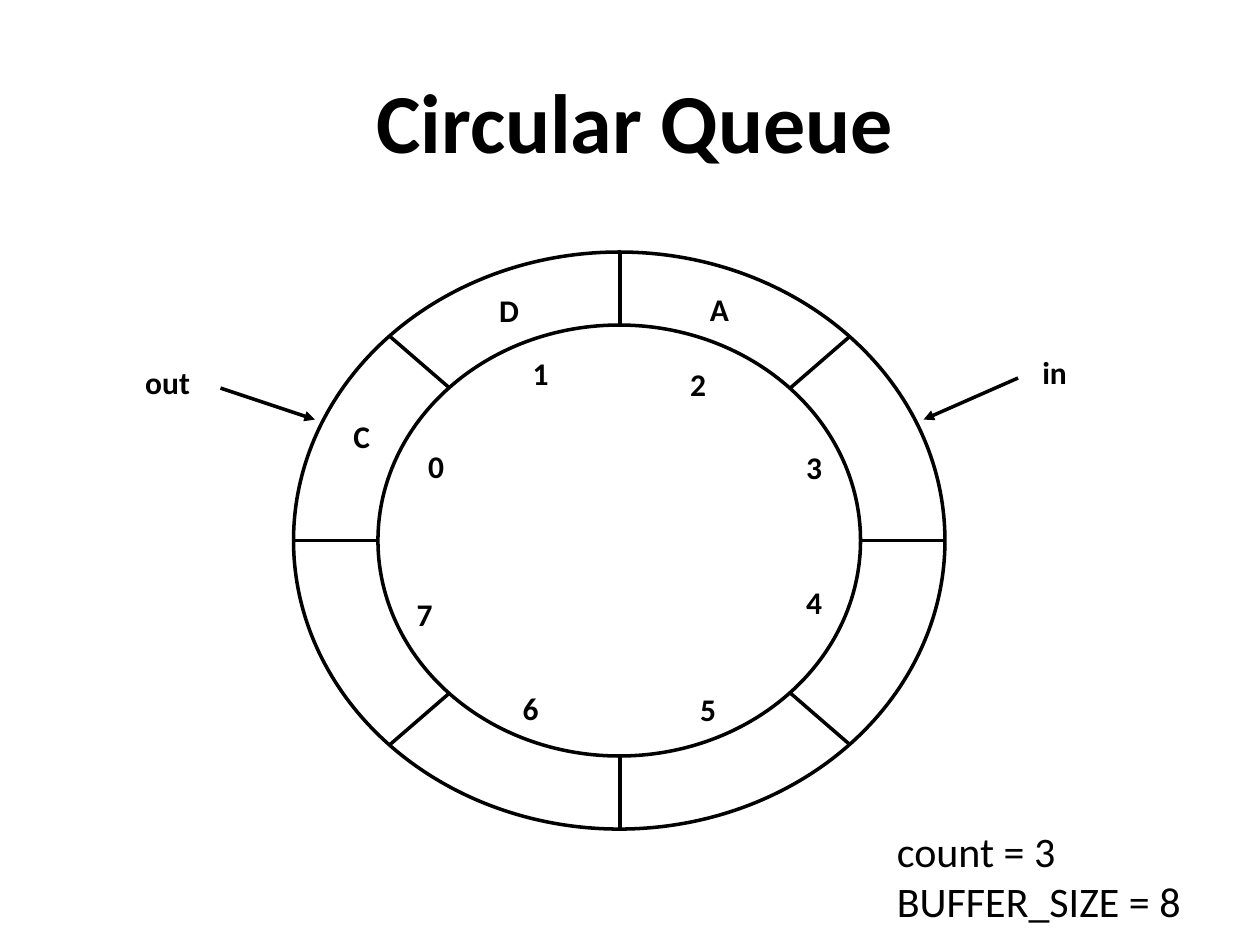
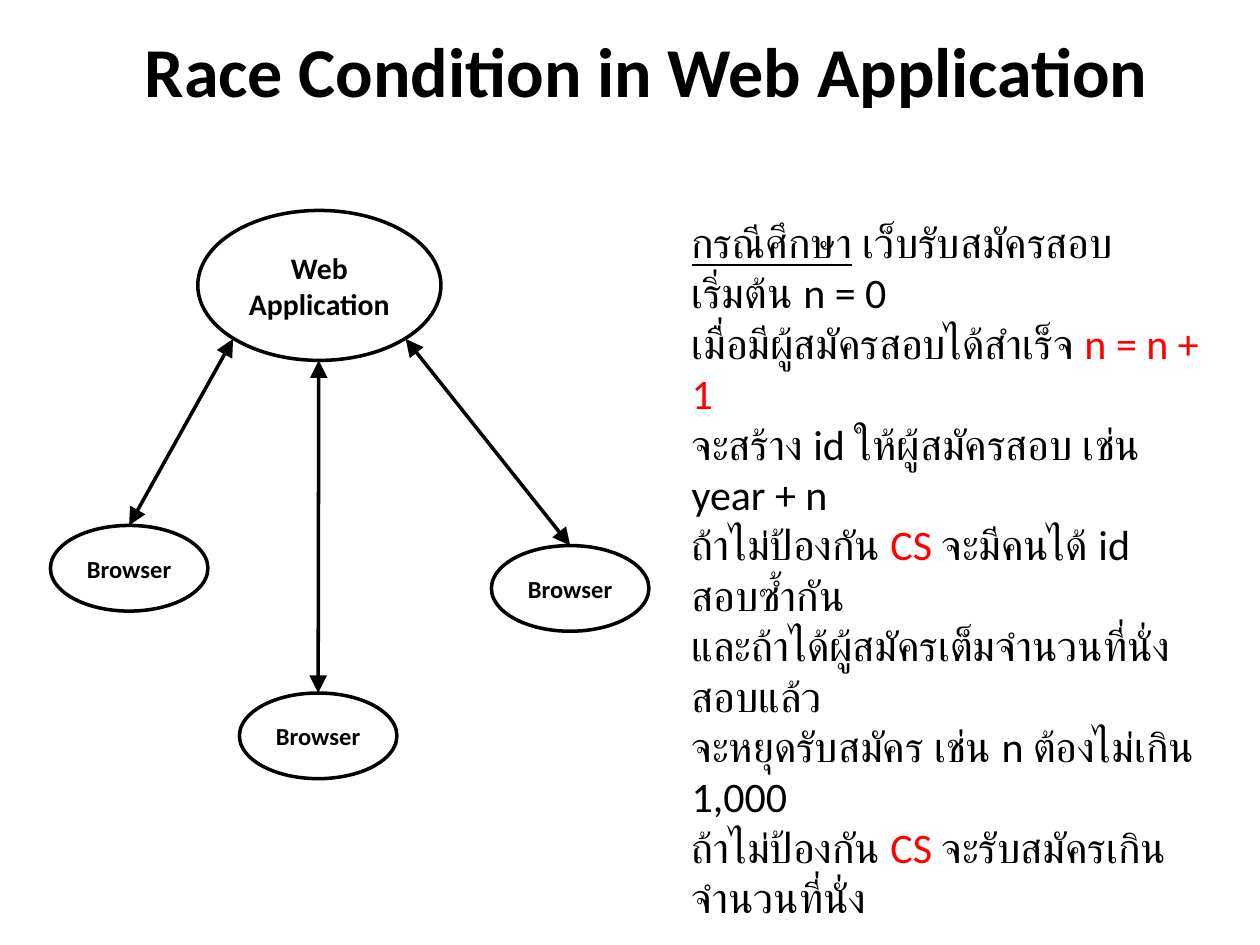
"""Build two slides: a circular queue and a race condition in a web application."""
import math

import lxml.etree
import pptx
import pptx.dml.color
import pptx.enum.shapes
import pptx.enum.text
import pptx.oxml.ns
import pptx.util

Inches = pptx.util.Inches
COLOURS = {"ink": "000000", "accent": "FF0000"}
FONT = "Calibri"
LINE_WIDTH = pptx.util.Pt(2)
CENTRE = pptx.enum.text.PP_ALIGN.CENTER
LEFT = pptx.enum.text.PP_ALIGN.LEFT
MIDDLE = pptx.enum.text.MSO_ANCHOR.MIDDLE


def write(text_frame, paragraphs, size, bold=False, alignment=CENTRE):
    text_frame.word_wrap = True
    for index, runs in enumerate(paragraphs):
        paragraph = text_frame.add_paragraph() if index else text_frame.paragraphs[0]
        paragraph.alignment = alignment
        for text, colour, underline in runs:
            for line_index, line in enumerate(text.split("\n")):
                if line_index:
                    paragraph.add_line_break()
                if line:
                    run = paragraph.add_run()
                    run.text = line
                    run.font.name = FONT
                    run.font.size = pptx.util.Pt(size)
                    run.font.bold = bold
                    run.font.underline = underline
                    run.font.color.rgb = pptx.dml.color.RGBColor.from_string(COLOURS[colour])


def connect(slide, start, end, arrow_ends=(), arrow_size="med"):
    connector = slide.shapes.add_connector(
        pptx.enum.shapes.MSO_CONNECTOR.STRAIGHT, *[Inches(value) for value in (*start, *end)])
    connector.line.color.rgb = pptx.dml.color.RGBColor.from_string(COLOURS["ink"])
    connector.line.width = LINE_WIDTH
    line = connector.line._get_or_add_ln()
    for arrow_end in arrow_ends:
        lxml.etree.SubElement(line, pptx.oxml.ns.qn(f"a:{arrow_end}"),
                              type="triangle", w=arrow_size, len=arrow_size)
    lxml.etree.SubElement(connector._element.spPr, pptx.oxml.ns.qn("a:effectLst"))
    return connector


presentation = pptx.Presentation()
presentation.slide_width = Inches(10)
presentation.slide_height = Inches(7.5)

slides = []
for title, size, left, top, height in [
    ("Circular Queue", 48, 0.58, 0.5, 0.91),
    ("Race Condition in Web Application", 40, 0.67, 0.17, 0.77),
]:
    slide = presentation.slides.add_slide(presentation.slide_layouts[5])
    shape = slide.shapes.title
    shape.left, shape.top = Inches(left), Inches(top)
    shape.width, shape.height = Inches(8.92), Inches(height)
    shape.text_frame.auto_size = pptx.enum.text.MSO_AUTO_SIZE.NONE
    shape.text_frame.vertical_anchor = MIDDLE
    write(shape.text_frame, [[(title, "ink", False)]], size, bold=True)
    slides.append(slide)
queue_slide, race_slide = slides

ellipses = []
for slide, left, top, width, height, text, size in [
    (queue_slide, 3, 2.58, 3.83, 3.42, "", 18),
    (queue_slide, 2.33, 2, 5.17, 4.58, "", 18),
    (race_slide, 1.57, 1.67, 1.93, 1.19, "Web Application", 17),
    (race_slide, 0.4, 4.17, 1.25, 0.68, "Browser", 14),
    (race_slide, 1.9, 5.5, 1.25, 0.68, "Browser", 14),
    (race_slide, 3.9, 4.33, 1.25, 0.68, "Browser", 14),
]:
    shape = slide.shapes.add_shape(
        pptx.enum.shapes.MSO_SHAPE.OVAL, Inches(left), Inches(top), Inches(width), Inches(height))
    shape.shadow.inherit = False
    shape.fill.background()
    shape.line.color.rgb = pptx.dml.color.RGBColor.from_string(COLOURS["ink"])
    shape.line.width = LINE_WIDTH
    if text:
        shape.text_frame.margin_left = shape.text_frame.margin_right = Inches(0.05)
        shape.text_frame.vertical_anchor = MIDDLE
        write(shape.text_frame, [[(text, "ink", False)]], size, bold=True)
    ellipses.append(shape)

ring_x, ring_y = 4.92, 4.29
for step in range(8):
    angle = step * math.pi / 4
    inner, outer = [
        (ring_x + radius_x * math.cos(angle), ring_y + radius_y * math.sin(angle))
        for radius_x, radius_y in [(1.91, 1.71), (2.58, 2.29)]
    ]
    connect(queue_slide, outer, inner)

for start, end in [((1.75, 3.08), (2.5, 3.33)), ((8.08, 3), (7.33, 3.33))]:
    connect(queue_slide, start, end, ["tailEnd"])

for label, left, top in [
    ("in", 8.08, 2.75), ("out", 1.04, 2.83),
    ("C", 2.58, 3.26), ("D", 3.75, 2.26), ("A", 5.42, 2.25),
    ("0", 3.17, 3.5), ("1", 4, 2.76), ("2", 5.25, 2.85), ("3", 6.17, 3.51),
    ("4", 6.17, 4.58), ("5", 5.33, 5.43), ("6", 3.92, 5.42), ("7", 3.08, 4.67),
]:
    shape = queue_slide.shapes.add_textbox(Inches(left), Inches(top), Inches(0.58), Inches(0.4))
    write(shape.text_frame, [[(label, "ink", False)]], 18, bold=True)

for start, end, browser in [
    ((1.85, 2.69), (1.03, 4.17), ellipses[3]),
    ((2.53, 2.86), (2.53, 5.5), ellipses[4]),
    ((3.22, 2.69), (4.53, 4.33), ellipses[5]),
]:
    connector = connect(race_slide, start, end, ["headEnd", "tailEnd"], "lg")
    connector.end_connect(browser, 0)

queue_state = [[("count = 3\nBUFFER_SIZE = 8", "ink", False)]]
case_study = [
    [
        ("กรณีศึกษา", "ink", True),
        (" เว็บรับสมัครสอบ\nเริ่มต้น n = 0\nเมื่อมีผู้สมัครสอบได้สำเร็จ ", "ink", False),
        ("n = n + 1\n", "accent", False),
        ("จะสร้าง id ให้ผู้สมัครสอบ เช่น year + n\nถ้าไม่ป้องกัน ", "ink", False),
        ("CS", "accent", False),
        (" จะมีคนได้ id สอบซ้ำกัน", "ink", False),
    ],
    [("และถ้าได้ผู้สมัครเต็มจำนวนที่นั่งสอบแล้ว", "ink", False)],
    [
        ("จะหยุดรับสมัคร เช่น n ต้องไม่เกิน 1,000\nถ้าไม่ป้องกัน ", "ink", False),
        ("CS ", "accent", False),
        ("จะรับสมัครเกินจำนวนที่นั่ง", "ink", False),
    ],
]
for slide, left, top, width, height, paragraphs in [
    (queue_slide, 7.02, 6.5, 2.92, 0.91, queue_state),
    (race_slide, 5.39, 1.67, 4.25, 3.33, case_study),
]:
    shape = slide.shapes.add_textbox(Inches(left), Inches(top), Inches(width), Inches(height))
    write(shape.text_frame, paragraphs, 24, alignment=LEFT)

presentation.save("out.pptx")
